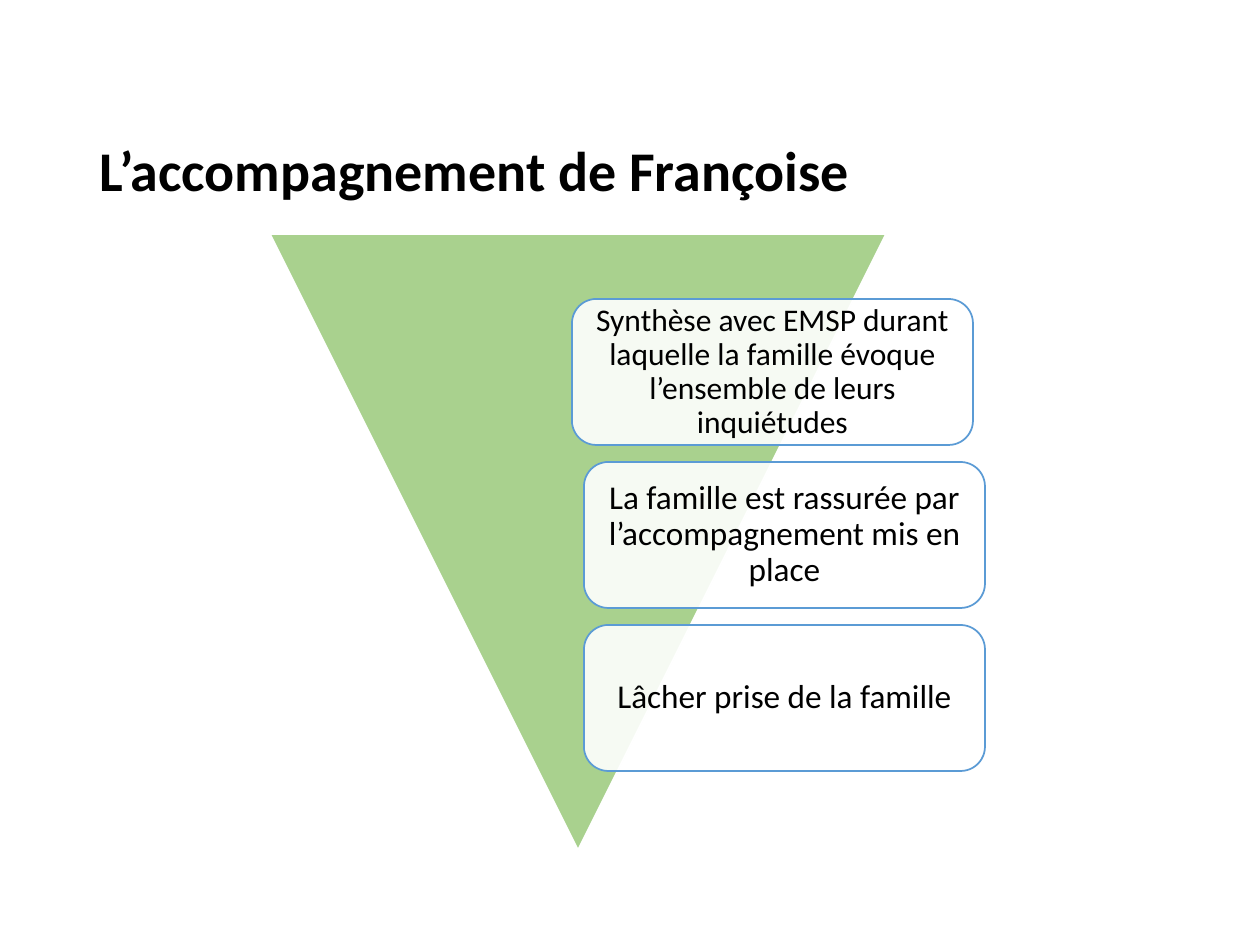
import pptx
import pptx.util
import pptx.dml.color
import pptx.enum.shapes
import pptx.enum.text
import pptx.oxml.ns
import lxml.etree

RGBColor = pptx.dml.color.RGBColor
SHAPES = pptx.enum.shapes.MSO_SHAPE
ALIGN = pptx.enum.text.PP_ALIGN

BLACK = RGBColor(0x00, 0x00, 0x00)
WHITE = RGBColor(0xFF, 0xFF, 0xFF)
GREEN = RGBColor(0xA9, 0xD1, 0x8E)
BLUE = RGBColor(0x5B, 0x9B, 0xD5)

TITLE = "L’accompagnement de Françoise"
STEPS = [
    ("Synthèse avec EMSP durant laquelle la famille évoque l’ensemble de leurs inquiétudes", 572, 18, 9),
    ("La famille est rassurée par l’accompagnement mis en place", 584, 19, 10),
    ("Lâcher prise de la famille", 584, 19, 10),
]
PX_PER_INCH = 126
TITLE_BOX = (87, 139, 1086, 69)
TRIANGLE_BOX = (270, 234, 616, 616)
CARD_TOP, CARD_PITCH, CARD_WIDTH, CARD_HEIGHT = 299, 163, 401, 146


def px(length):
    return pptx.util.Emu(round(length * 914400 / PX_PER_INCH))


def write(box, text, size, bold=False, align=ALIGN.LEFT, inset=(13, 6)):
    frame = box.text_frame
    frame.word_wrap = True
    frame.vertical_anchor = pptx.enum.text.MSO_ANCHOR.MIDDLE
    frame.margin_left = frame.margin_right = px(inset[0])
    frame.margin_top = frame.margin_bottom = px(inset[1])
    para = frame.paragraphs[0]
    para.alignment = align
    para.line_spacing = 0.9
    span = para.add_run()
    span.text = text
    span.font.name = "Calibri"
    span.font.size = pptx.util.Pt(size)
    span.font.bold = bold
    span.font.color.rgb = BLACK


def add_outline(page, kind, place, fill, line, opacity=100):
    shape = page.shapes.add_shape(kind, *map(px, place))
    shape.shadow.inherit = False
    shape.fill.solid()
    shape.fill.fore_color.rgb = fill
    shape.line.color.rgb = line
    shape.line.width = pptx.util.Pt(1)
    if opacity < 100:
        qn = pptx.oxml.ns.qn
        color = shape.fill._xPr.find(qn("a:solidFill")).find(qn("a:srgbClr"))
        lxml.etree.SubElement(color, qn("a:alpha"), val=str(opacity * 1000))
    return shape


def main():
    deck = pptx.Presentation()
    deck.slide_width = px(1260)
    deck.slide_height = px(945)
    page = deck.slides.add_slide(deck.slide_layouts[6])

    title = page.shapes.add_textbox(*map(px, TITLE_BOX))
    write(title, TITLE, 32, bold=True)

    triangle = add_outline(page, SHAPES.ISOSCELES_TRIANGLE, TRIANGLE_BOX, GREEN, WHITE)
    triangle.rotation = 180

    for index, (text, left, size, inset) in enumerate(STEPS):
        place = (left, CARD_TOP + index * CARD_PITCH, CARD_WIDTH, CARD_HEIGHT)
        card = add_outline(page, SHAPES.ROUNDED_RECTANGLE, place, WHITE, BLUE, opacity=90)
        write(card, text, size, align=ALIGN.CENTER, inset=(inset, inset))

    deck.save("out.pptx")


if __name__ == "__main__":
    main()
